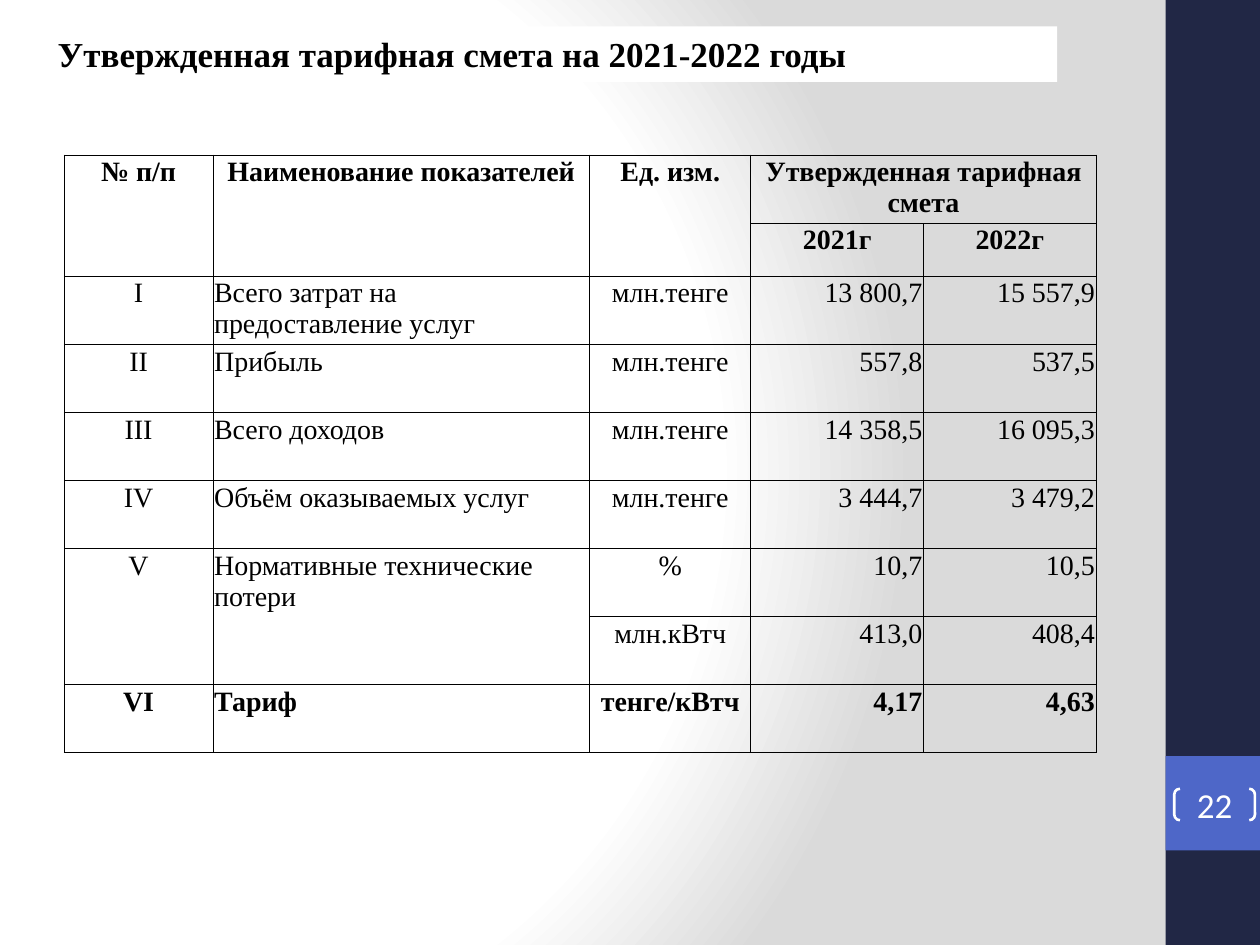
from pptx import Presentation
from pptx.dml.color import RGBColor
from pptx.enum.shapes import MSO_SHAPE
from pptx.enum.text import MSO_ANCHOR, MSO_AUTO_SIZE, PP_ALIGN
from pptx.oxml import parse_xml
from pptx.oxml.ns import nsdecls
from pptx.util import Inches, Pt


def color(hex_string):
    return RGBColor.from_string(hex_string)


def style(paragraph, size, font_name, text_color, bold=False, align=PP_ALIGN.LEFT):
    paragraph.alignment = align
    font = paragraph.font
    font.size, font.name, font.bold = Pt(size), font_name, bold
    font.color.rgb = color(text_color)


prs = Presentation()
prs.slide_width, prs.slide_height = Inches(10), Inches(7.5)
slide = prs.slides.add_slide(prs.slide_layouts[6])
shapes = slide.shapes

# Background: circular gradient from white to grey
stops = "".join(
    f'<a:gs pos="{share * 1000}"><a:srgbClr val="{tone}"/></a:gs>'
    for share, tone in [(0, "FFFFFF"), (75, "FFFFFF"), (100, "DADADA")])
slide.element.cSld.insert(0, parse_xml(
    f'<p:bg {nsdecls("p", "a")}><p:bgPr><a:gradFill rotWithShape="1">'
    f'<a:gsLst>{stops}</a:gsLst><a:path path="circle">'
    '<a:fillToRect l="20000" t="50000" r="100000" b="50000"/></a:path>'
    '</a:gradFill><a:effectLst/></p:bgPr></p:bg>'))

# Side band with the page number square
band_left, band_width = Inches(9.25), Inches(0.75)
for top, height, tone in [(0, 7.5, "212745"), (6, 0.75, "4E67C8")]:
    band = shapes.add_shape(MSO_SHAPE.RECTANGLE, band_left, Inches(top),
                            band_width, Inches(height))
    band.shadow.inherit = False
    band.fill.solid()
    band.fill.fore_color.rgb = color(tone)
    band.line.fill.background()

page_number = shapes.add_shape(MSO_SHAPE.DOUBLE_BRACKET, Inches(9.32), Inches(6.26),
                               Inches(0.64), Inches(0.25))
page_number.adjustments[0] = 0.18
page_number.shadow.inherit = False
page_number.fill.background()
page_number.line.color.rgb = color("FFFFFF")
page_number.line.width = Pt(1.5)
number_frame = page_number.text_frame
number_frame.margin_left = number_frame.margin_right = 0
number_frame.margin_top = number_frame.margin_bottom = 0
number_frame.vertical_anchor = MSO_ANCHOR.MIDDLE
number_frame.text = "22"
style(number_frame.paragraphs[0], 20, "Calibri", "FFFFFF", align=PP_ALIGN.CENTER)

# Title
title = shapes.add_textbox(Inches(0.36), Inches(0.21), Inches(8.03), Inches(0.44))
title.fill.solid()
title.fill.fore_color.rgb = color("FFFFFF")
title.text_frame.word_wrap = True
title.text_frame.auto_size = MSO_AUTO_SIZE.SHAPE_TO_FIT_TEXT
title.text_frame.text = "Утвержденная тарифная смета на 2021-2022 годы"
style(title.text_frame.paragraphs[0], 20, "Times New Roman", "000000", bold=True)

# Tariff table: None marks a cell covered by a merge
tariff_rows = [
    ["№ п/п", "Наименование показателей", "Ед. изм.", "Утвержденная тарифная смета", None],
    [None, None, None, "2021г", "2022г"],
    ["I", "Всего затрат на предоставление услуг", "млн.тенге", "13 800,7", "15 557,9"],
    ["II", "Прибыль", "млн.тенге", "557,8", "537,5"],
    ["III", "Всего доходов", "млн.тенге", "14 358,5", "16 095,3"],
    ["IV", "Объём оказываемых услуг", "млн.тенге", "3 444,7", "3 479,2"],
    ["V", "Нормативные технические потери", "%", "10,7", "10,5"],
    [None, None, "млн.кВтч", "413,0", "408,4"],
    ["VI", "Тариф", "тенге/кВтч", "4,17", "4,63"],
]
column_widths = [1.18, 2.99, 1.28, 1.37, 1.37]
row_heights = [0.42] * 2 + [0.54] * 7
column_aligns = [PP_ALIGN.CENTER, PP_ALIGN.LEFT, PP_ALIGN.CENTER,
                 PP_ALIGN.RIGHT, PP_ALIGN.RIGHT]
header_rows, bold_rows = (0, 1), (0, 1, 8)

tariffs = shapes.add_table(
    len(row_heights), len(column_widths), Inches(0.51), Inches(1.23),
    Inches(sum(column_widths)), Inches(sum(row_heights))).table
tariffs.first_row = tariffs.horz_banding = False
for column, width in zip(tariffs.columns, column_widths):
    column.width = Inches(width)
for row, height in zip(tariffs.rows, row_heights):
    row.height = Inches(height)

for r, texts in enumerate(tariff_rows):
    for c, text in enumerate(texts):
        cell = tariffs.cell(r, c)
        cell.margin_left = cell.margin_right = cell.margin_top = Inches(0.01)
        cell.margin_bottom = 0
        for side in "LRTB":
            cell._tc.get_or_add_tcPr().append(parse_xml(
                f'<a:ln{side} {nsdecls("a")} w="{Pt(0.5)}"><a:solidFill>'
                f'<a:srgbClr val="000000"/></a:solidFill></a:ln{side}>'))
        cell.fill.background()
        cell.text = text or ""
        align = PP_ALIGN.CENTER if r in header_rows else column_aligns[c]
        style(cell.text_frame.paragraphs[0], 16, "Times New Roman", "000000",
              bold=r in bold_rows, align=align)

# Merged cells: first row, first column, last row, last column
for top, left, bottom, right in [(0, 0, 1, 0), (0, 1, 1, 1), (0, 2, 1, 2),
                                 (0, 3, 0, 4), (6, 0, 7, 0), (6, 1, 7, 1)]:
    tariffs.cell(top, left).merge(tariffs.cell(bottom, right))

prs.save("out.pptx")
